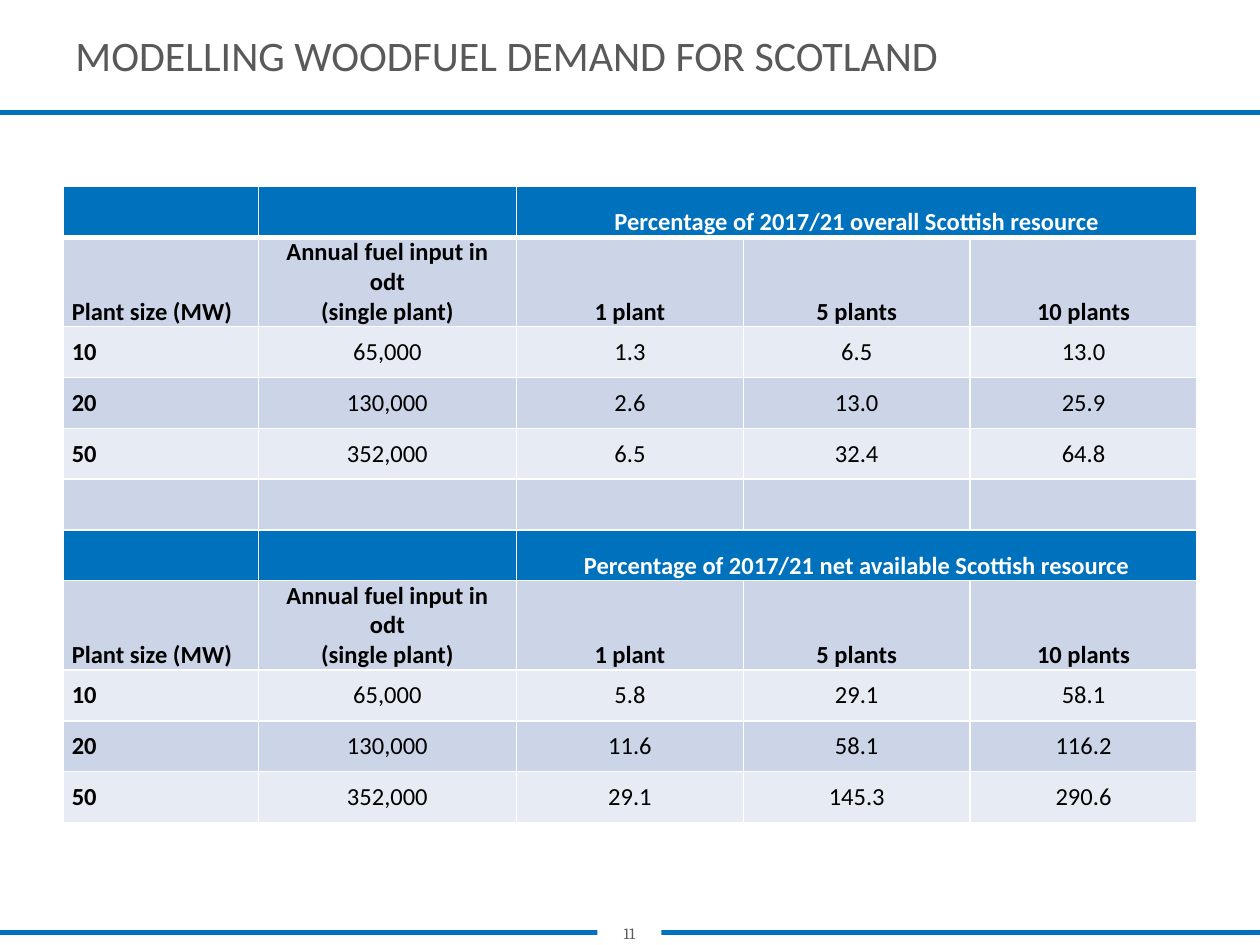
from lxml.etree import SubElement
from pptx import Presentation
from pptx.dml.color import RGBColor
from pptx.enum.shapes import MSO_SHAPE as Shape
from pptx.enum.text import MSO_ANCHOR as Anchor, PP_ALIGN as Align
from pptx.oxml.ns import qn
from pptx.util import Inches, Pt

BLUE, GREY, WHITE, BLACK = "0071BC", "595959", "FFFFFF", "000000"
DARK_BAND, LIGHT_BAND = "CCD5E7", "E7EBF3"
COLUMN_WIDTHS = [15.5, 20.5, 18, 18, 18]
TABLE_HEIGHT, HEADING_HEIGHT = 50.5, 7.1

COLUMN_HEADINGS = ["Plant size (MW)", "Annual fuel input in odt\n(single plant)",
                   "1 plant", "5 plants", "10 plants"]
SECTIONS = [
    ("Percentage of 2017/21 overall Scottish resource",
     [["10", "65,000", "1.3", "6.5", "13.0"],
      ["20", "130,000", "2.6", "13.0", "25.9"],
      ["50", "352,000", "6.5", "32.4", "64.8"]]),
    ("Percentage of 2017/21 net available Scottish resource",
     [["10", "65,000", "5.8", "29.1", "58.1"],
      ["20", "130,000", "11.6", "58.1", "116.2"],
      ["50", "352,000", "29.1", "145.3", "290.6"]]),
]


def color(code):
    return RGBColor.from_string(code)


def grid(units):
    """Convert units of a 100 by 75 grid over the slide to a length."""
    return Inches(units / 10)


class SlideBuilder:
    def __init__(self, slide):
        self.slide = slide
        self.body_font = "Calibri"
        self.number_font = "Cambria"

    def add_text(self, frame, text, size, code, bold=False, align=Align.LEFT, font=None):
        for index, line in enumerate(text.split("\n")):
            para = frame.add_paragraph() if index else frame.paragraphs[0]
            para.alignment = align
            span = para.add_run()
            span.text = line
            span.font.name = font or self.body_font
            span.font.size = Pt(size)
            span.font.bold = bold
            span.font.color.rgb = color(code)

    def title(self, text, *place):
        box = self.slide.shapes.add_textbox(*map(grid, place))
        box.text_frame.word_wrap = True
        box.text_frame.vertical_anchor = Anchor.MIDDLE
        self.add_text(box.text_frame, text, 24, GREY)

    def bar(self, fill, *place):
        bar = self.slide.shapes.add_shape(Shape.RECTANGLE, *map(grid, place))
        bar.shadow.inherit = False
        bar.fill.solid()
        bar.fill.fore_color.rgb = color(fill)
        bar.line.fill.background()
        return bar

    def rule(self, top):
        line = self.bar(BLUE, 0, top, 100, 0.2).line
        line.color.rgb = color(BLUE)
        line.width = Pt(1.5)

    def page_number(self, text, *place):
        frame = self.bar(WHITE, *place).text_frame
        frame.word_wrap = True
        frame.vertical_anchor = Anchor.MIDDLE
        frame.margin_left = frame.margin_right = grid(0.2)
        frame.margin_top = frame.margin_bottom = grid(0.2)
        self.add_text(frame, text, 9, GREY, align=Align.CENTER, font=self.number_font)

    def style_cell(self, cell, fill, bottom_width):
        properties = cell._tc.get_or_add_tcPr()
        for side, width in zip("LRTB", (1, 1, 1, bottom_width)):
            border = SubElement(properties, qn(f"a:ln{side}"), w=str(Pt(width)))
            paint = SubElement(border, qn("a:solidFill"))
            SubElement(paint, qn("a:srgbClr"), val=WHITE)
        cell.fill.solid()
        cell.fill.fore_color.rgb = color(fill)
        cell.margin_left = cell.margin_right = grid(0.7)
        cell.margin_top = cell.margin_bottom = 0

    def table(self, rows, left, top):
        """Draw rows given as (kind, texts); a section title spans the last three columns."""
        frame = self.slide.shapes.add_table(
            len(rows), len(COLUMN_WIDTHS), grid(left), grid(top),
            grid(sum(COLUMN_WIDTHS)), grid(TABLE_HEIGHT))
        table = frame.table
        table.first_row = table.horz_banding = False
        for column, width in zip(table.columns, COLUMN_WIDTHS):
            column.width = grid(width)
        headings = sum(kind == "heading" for kind, _ in rows)
        plain_height = (TABLE_HEIGHT - headings * HEADING_HEIGHT) / (len(rows) - headings)

        for r, (kind, texts) in enumerate(rows):
            table.rows[r].height = grid(HEADING_HEIGHT if kind == "heading" else plain_height)
            band = DARK_BAND if r % 2 else LIGHT_BAND
            for c, text in enumerate(texts):
                cell = table.cell(r, c)
                self.style_cell(cell, BLUE if kind == "section" else band, 1 if r else 3)
                cell.vertical_anchor = Anchor.MIDDLE if kind == "data" else Anchor.BOTTOM
                if text:
                    centred = c > 0
                    self.add_text(cell.text_frame, text, 14,
                                  WHITE if kind == "section" else BLACK,
                                  bold=kind != "data" or not centred,
                                  align=Align.CENTER if centred else Align.LEFT)
            if kind == "section":
                table.cell(r, 2).merge(table.cell(r, 4))


def table_rows():
    rows = []
    for heading, records in SECTIONS:
        if rows:
            rows.append(("data", [""] * 5))
        rows.append(("section", ["", "", heading, "", ""]))
        rows.append(("heading", COLUMN_HEADINGS))
        rows += [("data", record) for record in records]
    return rows


def main():
    deck = Presentation()
    deck.slide_width, deck.slide_height = grid(100), grid(75)
    page = SlideBuilder(deck.slides.add_slide(deck.slide_layouts[6]))
    page.rule(73.9)
    page.rule(8.8)
    page.title("MODELLING WOODFUEL DEMAND FOR SCOTLAND", 5, 0.4, 73.2, 7.9)
    page.page_number("11", 47.4, 73.1, 5.1, 1.9)
    page.table(table_rows(), 5, 14.8)
    deck.save("out.pptx")


if __name__ == "__main__":
    main()
